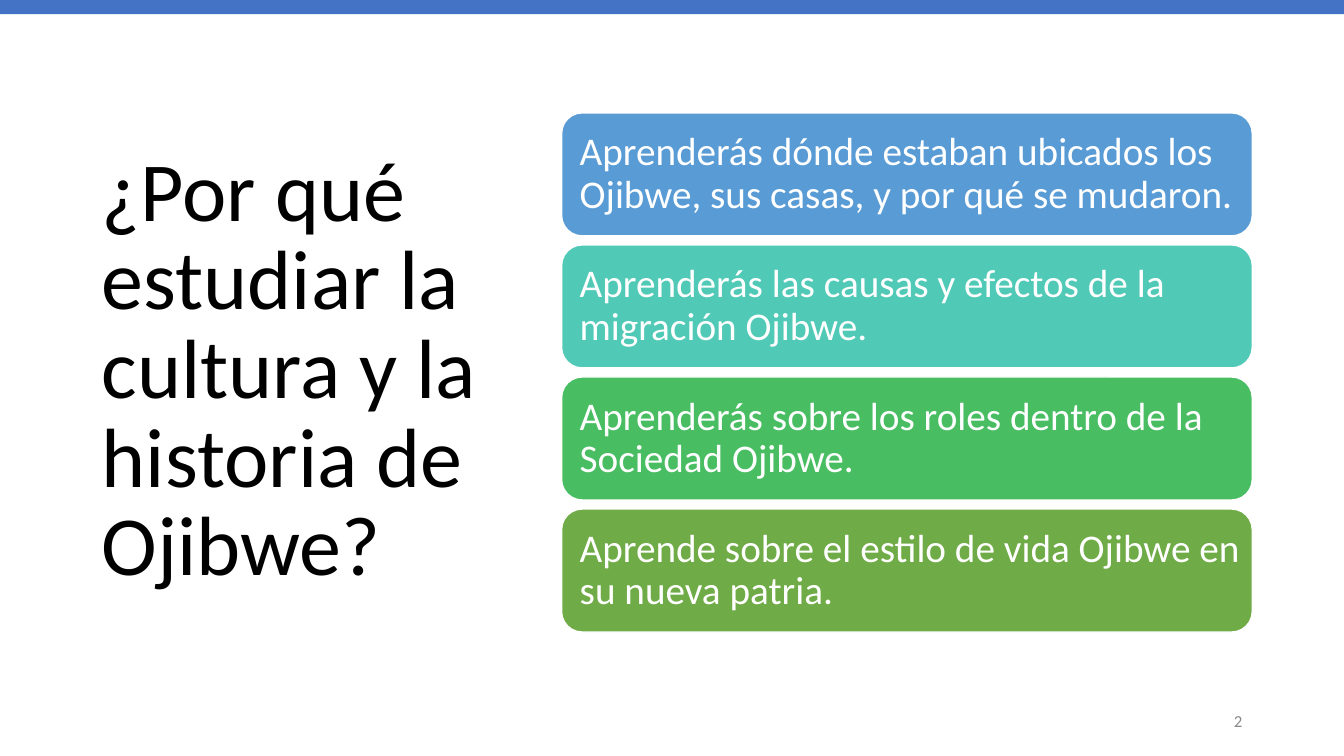
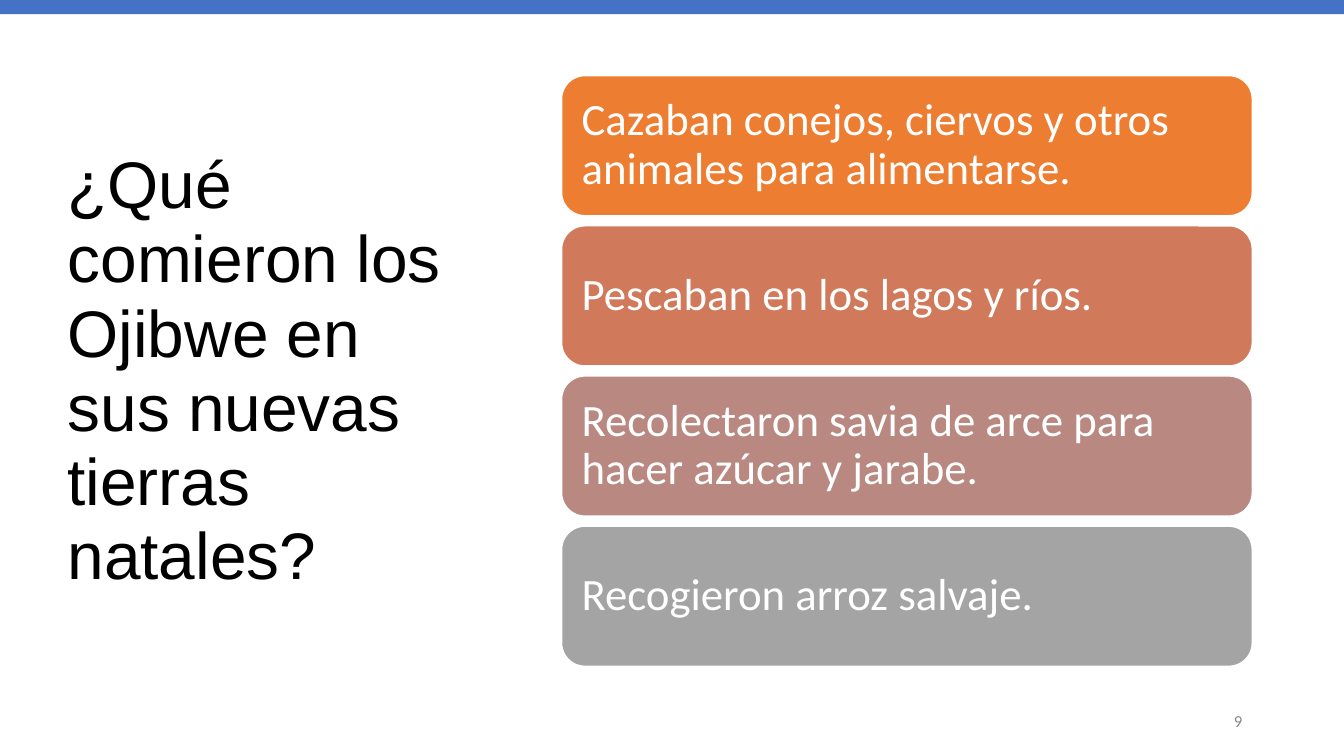
from pptx import Presentation
from pptx.dml.color import RGBColor
from pptx.enum.shapes import MSO_SHAPE
from pptx.enum.text import MSO_ANCHOR, MSO_AUTO_SIZE, PP_ALIGN
from pptx.util import Inches, Pt

RECT, ROUND_RECT = MSO_SHAPE.RECTANGLE, MSO_SHAPE.ROUNDED_RECTANGLE
MIDDLE = MSO_ANCHOR.MIDDLE
LEFT, RIGHT = PP_ALIGN.LEFT, PP_ALIGN.RIGHT
NO_AUTOFIT = MSO_AUTO_SIZE.NONE

# Colours and fonts
BLACK = RGBColor(0x00, 0x00, 0x00)
WHITE = RGBColor(0xFF, 0xFF, 0xFF)
GREY = RGBColor(0x88, 0x88, 0x88)
BAND_BLUE = RGBColor(0x44, 0x72, 0xC4)
BLUE = RGBColor(0x59, 0x9B, 0xD5)
TEAL = RGBColor(0x50, 0xC9, 0xB6)
GREEN = RGBColor(0x48, 0xBD, 0x62)
OLIVE = RGBColor(0x6F, 0xAB, 0x46)
ORANGE = RGBColor(0xED, 0x7D, 0x31)
TERRACOTTA = RGBColor(0xD0, 0x7A, 0x5B)
ROSE = RGBColor(0xB8, 0x88, 0x81)
SILVER = RGBColor(0xA4, 0xA4, 0xA4)
BODY_FONT = "Calibri"

# Shared geometry, in inches
SLIDE_W, SLIDE_H = 13.33, 7.5
CARD_LEFT, CARD_W = 5.57, 6.85

REASONS = [
    ("Aprenderás dónde estaban ubicados los Ojibwe, sus casas, y por qué se mudaron.", BLUE),
    ("Aprenderás las causas y efectos de la migración Ojibwe.", TEAL),
    ("Aprenderás sobre los roles dentro de la Sociedad Ojibwe.", GREEN),
    ("Aprende sobre el estilo de vida Ojibwe en su nueva patria.", OLIVE),
]
FOODS = [
    ("Cazaban conejos, ciervos y otros animales para alimentarse.", ORANGE),
    ("Pescaban en los lagos y ríos.", TERRACOTTA),
    ("Recolectaron savia de arce para hacer azúcar y jarabe.", ROSE),
    ("Recogieron arroz salvaje.", SILVER),
]


def set_text(sp, text, size, color, font=BODY_FONT, align=LEFT, spacing=1.0):
    """Write one paragraph, wrapped and centred vertically."""
    tf = sp.text_frame
    tf.text = text
    tf.word_wrap = True
    tf.auto_size = NO_AUTOFIT
    tf.vertical_anchor = MIDDLE
    p = tf.paragraphs[0]
    p.alignment = align
    p.line_spacing = spacing
    r = p.runs[0]
    r.font.name = font
    r.font.size = Pt(size)
    r.font.color.rgb = color


def add_block(s, kind, left, top, width, height, fill):
    sp = s.shapes.add_shape(kind, Inches(left), Inches(top), Inches(width), Inches(height))
    sp.shadow.inherit = False
    sp.fill.solid()
    sp.fill.fore_color.rgb = fill
    sp.line.fill.background()
    return sp


def add_base_slide(prs, title, left, size, font, spacing, number):
    """Slide with title, top band and page number."""
    s = prs.slides.add_slide(prs.slide_layouts[5])
    sp = s.shapes.title
    sp.left, sp.top = Inches(left), Inches(0.68)
    sp.width, sp.height = Inches(4.14), Inches(6.02)
    set_text(sp, title, size, BLACK, font, spacing=spacing)

    add_block(s, RECT, 0, 0, SLIDE_W, 0.14, BAND_BLUE)

    page = s.shapes.add_textbox(Inches(9.42), Inches(6.95), Inches(3), Inches(0.4))
    set_text(page, str(number), 12, GREY, align=RIGHT)
    return s


def add_cards(s, cards, top, height, pitch, size, inset):
    """Column of evenly spaced rounded cards."""
    for i, (text, fill) in enumerate(cards):
        sp = add_block(s, ROUND_RECT, CARD_LEFT, top + i * pitch, CARD_W, height, fill)
        sp.line.color.rgb = WHITE
        sp.line.width = Pt(1)
        tf = sp.text_frame
        tf.margin_left = tf.margin_top = tf.margin_bottom = Inches(inset)
        tf.margin_right = Inches(inset / 2)
        set_text(sp, text, size, WHITE, spacing=0.9)


def main():
    prs = Presentation()
    prs.slide_width, prs.slide_height = Inches(SLIDE_W), Inches(SLIDE_H)

    # Reasons to study
    s = add_base_slide(prs, "¿Por qué estudiar la cultura y la historia de Ojibwe?",
                       0.91, 60, BODY_FONT, 0.88, 2)
    add_cards(s, REASONS, top=1.12, height=1.22, pitch=1.31, size=28, inset=0.12)

    # Food in the new homeland
    s = add_base_slide(prs, "¿Qué comieron los Ojibwe en sus nuevas tierras natales?",
                       0.57, 47, "Arial", 0.94, 9)
    add_cards(s, FOODS, top=0.75, height=1.39, pitch=1.49, size=32, inset=0.13)

    prs.save("out.pptx")


if __name__ == "__main__":
    main()
